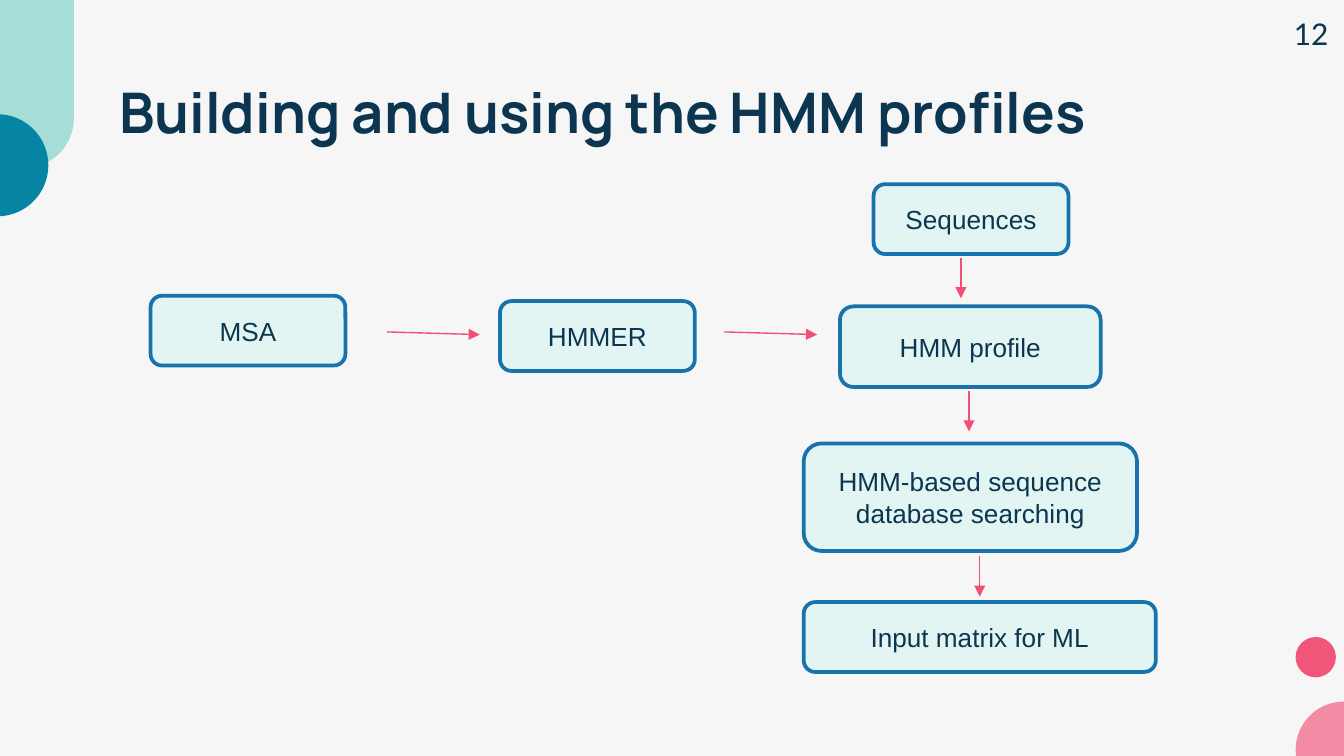
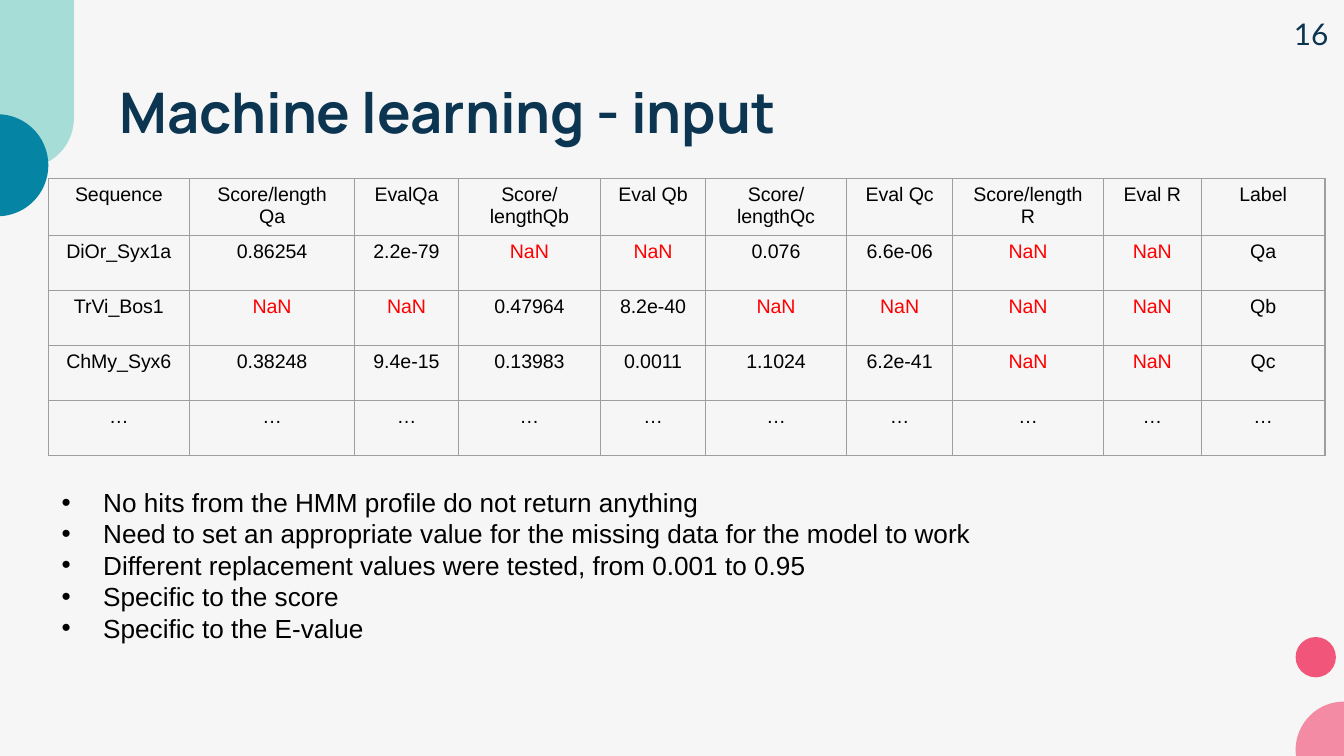
from lxml import etree
from pptx import Presentation
from pptx import util as u
from pptx.dml import color
from pptx.enum import shapes, text
from pptx.oxml import ns

NAVY, TEAL, MINT, PINK, ROSE = "0B3550", "0584A4", "74CEC4", "F2557A", "F14F75"
PALE, BLUE, GREY, BLACK, RED, PAPER = "E3F5F3", "1872AC", "9E9E9E", "000000", "FF0000", "F6F6F6"
SHAPE = shapes.MSO_SHAPE
CENTER = text.PP_ALIGN.CENTER
MIDDLE = text.MSO_ANCHOR.MIDDLE
BOX_W, BOX_H = 1.45, 0.52


def rgb(value):
    return color.RGBColor.from_string(value)


def inches(*values):
    return [u.Inches(v) for v in values]


def sub(parent, tag, **attrs):
    return etree.SubElement(parent, ns.qn(tag), attrs)


def write(p, words, size, font="Arial", ink=BLACK, bold=False, align=None):
    p.alignment = align
    r = p.add_run()
    r.text = words
    formats = {"size": u.Pt(size), "name": font, "bold": bold}
    for name, value in formats.items():
        setattr(r.font, name, value)
    r.font.color.rgb = rgb(ink)


def shape(s, kind, box, fill, alpha=None, line=None, adjust=()):
    sp = s.shapes.add_shape(kind, *inches(*box))
    sp.shadow.inherit = False
    sp.fill.solid()
    sp.fill.fore_color.rgb = rgb(fill)
    if alpha:
        clr = sp.fill._xPr.find(".//" + ns.qn("a:srgbClr"))
        sub(clr, "a:alpha", val=str(alpha * 1000))
    if line:
        sp.line.color.rgb = rgb(line)
        sp.line.width = u.Pt(2)
    else:
        sp.line.fill.background()
    for i, value in enumerate(adjust):
        sp.adjustments[i] = value
    return sp


def textbox(s, box, inset=0.05, grow=False):
    tf = s.shapes.add_textbox(*inches(*box)).text_frame
    formats = {"word_wrap": True, "margin_top": u.Inches(inset), "margin_bottom": u.Inches(inset)}
    if grow:
        formats["auto_size"] = text.MSO_AUTO_SIZE.SHAPE_TO_FIT_TEXT
    for name, value in formats.items():
        setattr(tf, name, value)
    return tf


def arrow(s, x, y, dx, dy):
    c = s.shapes.add_connector(shapes.MSO_CONNECTOR.STRAIGHT, *inches(x, y, x + dx, y + dy))
    c.line.color.rgb = rgb(ROSE)
    c.line.width = u.Pt(0.75)
    sub(c.line._get_or_add_ln(), "a:tailEnd", type="triangle")
    sub(c._element.spPr, "a:effectLst")


def corner_top(s, x, y):
    shape(s, SHAPE.ROUNDED_RECTANGLE, (x - 0.19, y - 0.75, 0.74, 2), MINT, 61, adjust=[0.5])
    shape(s, SHAPE.CHORD, (x - 0.4, y + 0.85, 0.76, 0.76), TEAL, adjust=[162, 54])


def corner_bottom(s, x, y):
    shape(s, SHAPE.OVAL, (x, y, 0.3, 0.3), PINK)
    shape(s, SHAPE.OVAL, (x, y + 0.48, 0.72, 0.72), PINK, 66)


def base_slide(prs, title, number):
    s = prs.slides.add_slide(prs.slide_layouts[6])
    s.background.fill.solid()
    s.background.fill.fore_color.rgb = rgb(PAPER)
    corner_top(s, 0, 0)
    corner_bottom(s, 9.64, 4.74)
    tf = textbox(s, (0.79, 0.48, 8.43, 0.63), inset=0.1)
    write(tf.paragraphs[0], title, 30, "Manrope", NAVY, True)
    tf = textbox(s, (9.53, 0.07, 0.5, 0.37), grow=True)
    write(tf.paragraphs[0], number, 16, "Lato", NAVY)
    return s


def workflow(s, x, y):
    steps = [
        ("MSA", 0, 0.83, BOX_W, BOX_H),
        ("HMMER", 2.6, 0.87, BOX_W, BOX_H),
        ("HMM profile", 5.13, 0.91, 1.94, 0.6),
        ("HMM-based sequence database searching", 4.86, 1.93, 2.48, 0.8),
        ("Sequences", 5.38, 0, BOX_W, BOX_H),
        ("Input matrix for ML", 4.86, 3.11, 2.62, BOX_H),
    ]
    for label, left, top, width, height in steps:
        sp = shape(s, SHAPE.ROUNDED_RECTANGLE, (x + left, y + top, width, height), PALE, line=BLUE)
        sp.text_frame.word_wrap = True
        sp.text_frame.vertical_anchor = MIDDLE
        write(sp.text_frame.paragraphs[0], label, 14, ink=NAVY, align=CENTER)
    for left in (1.76, 4.27):
        arrow(s, x + left, y + 1.1, 0.69, 0.02)
    for left, top in ((6.03, 0.55), (6.09, 1.54), (6.17, 2.77)):
        arrow(s, x + left, y + top, 0, 0.3)


def border(cell):
    tcPr = cell._tc.get_or_add_tcPr()
    for i, side in enumerate(("a:lnL", "a:lnR", "a:lnT", "a:lnB")):
        ln = etree.Element(ns.qn(side), w=str(u.Pt(0.75)))
        sub(sub(ln, "a:solidFill"), "a:srgbClr", val=GREY)
        tcPr.insert(i, ln)


def score_table(s, x, y, widths, rows, row_height):
    box = inches(x, y, sum(widths), row_height * len(rows))
    table = s.shapes.add_table(len(rows), len(widths), *box).table
    table.first_row = table.horz_banding = False
    for column, width in zip(table.columns, widths):
        column.width = u.Inches(width)
    for row, values in zip(table.rows, rows):
        row.height = u.Inches(row_height)
        for cell, value in zip(row.cells, values):
            cell.fill.background()
            cell.margin_top, cell.margin_bottom = inches(0.04, 0.03)
            border(cell)
            ink = RED if value == "NaN" else BLACK
            write(cell.text_frame.paragraphs[0], value, 10.5, ink=ink, align=CENTER)


def bullets(s, box, items):
    tf = textbox(s, box, grow=True)
    indent = u.Inches(0.31)
    for i, item in enumerate(items):
        p = tf.add_paragraph() if i else tf.paragraphs[0]
        write(p, item, 14)
        pPr = p._p.get_or_add_pPr()
        pPr.set("marL", str(indent))
        pPr.set("indent", str(-indent))
        sub(sub(pPr, "a:buClr"), "a:srgbClr", val=BLACK)
        sub(pPr, "a:buFont", typeface="Arial")
        sub(pPr, "a:buChar", char="•")


def profiles_slide(prs):
    s = base_slide(prs, "Building and using the HMM profiles", "12")
    workflow(s, 1.12, 1.37)


def input_slide(prs):
    s = base_slide(prs, "Machine learning - input", "16")
    widths = [1.05, 1.23, 0.77, 1.06, 0.78, 1.05, 0.79, 1.12, 0.73, 0.92]
    rows = [
        ["Sequence", "Score/length Qa", "EvalQa", "Score/lengthQb", "Eval Qb",
         "Score/lengthQc", "Eval Qc", "Score/length R", "Eval R", "Label"],
        ["DiOr_Syx1a", "0.86254", "2.2e-79", "NaN", "NaN", "0.076", "6.6e-06", "NaN", "NaN", "Qa"],
        ["TrVi_Bos1", "NaN", "NaN", "0.47964", "8.2e-40", "NaN", "NaN", "NaN", "NaN", "Qb"],
        ["ChMy_Syx6", "0.38248", "9.4e-15", "0.13983", "0.0011", "1.1024", "6.2e-41", "NaN", "NaN", "Qc"],
        ["…"] * len(widths),
    ]
    score_table(s, 0.36, 1.33, widths, rows, 0.41)
    bullets(s, (0.36, 3.57, 9.27, 1.28), [
        "No hits from the HMM profile do not return anything",
        "Need to set an appropriate value for the missing data for the model to work",
        "Different replacement values were tested, from 0.001 to 0.95",
        "Specific to the score",
        "Specific to the E-value",
    ])


def main():
    prs = Presentation()
    prs.slide_width = u.Inches(10)
    prs.slide_height = prs.slide_width * 9 // 16
    profiles_slide(prs)
    input_slide(prs)
    prs.save("out.pptx")


if __name__ == "__main__":
    main()
